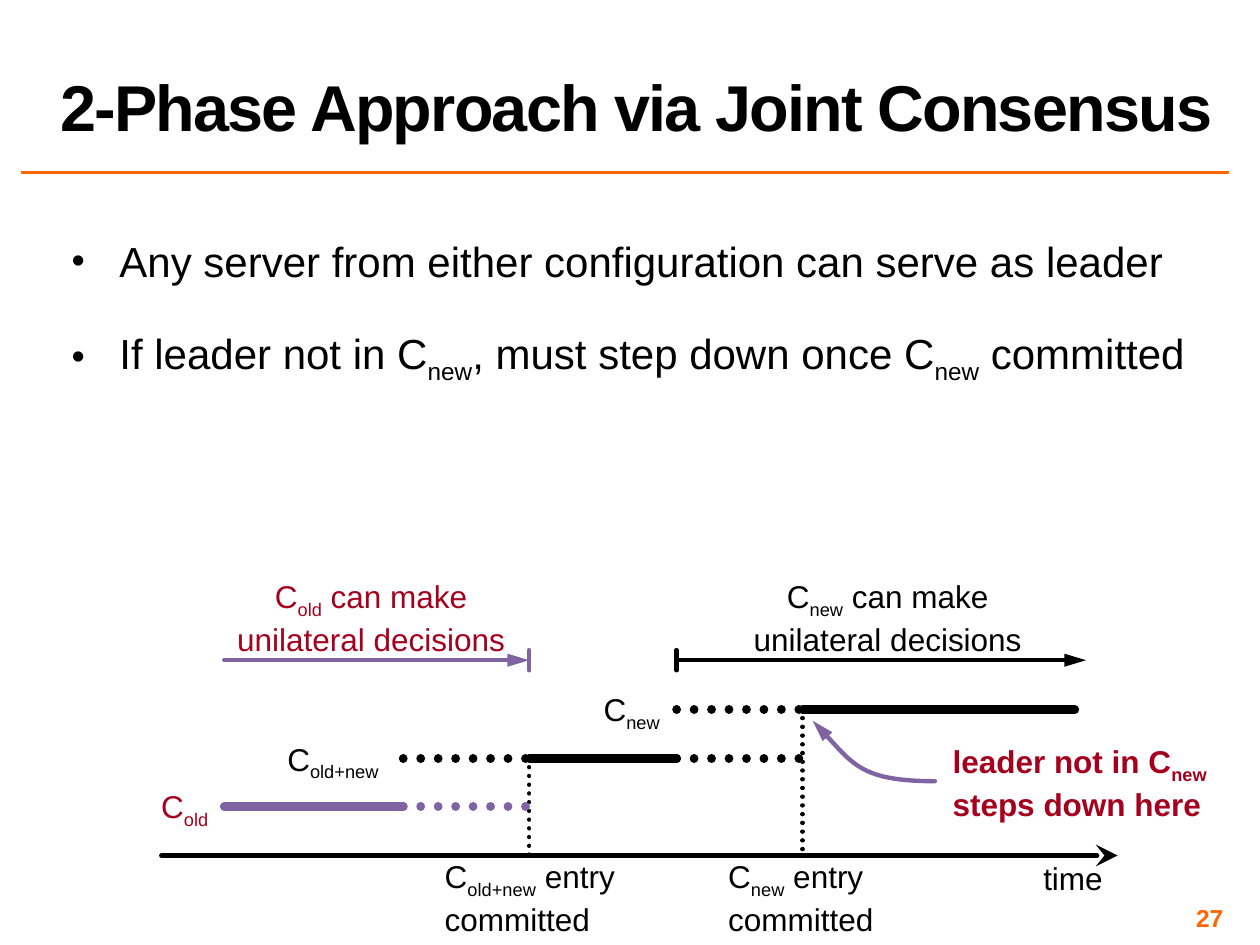
"""Build the slide on two-phase membership change through joint consensus."""
from lxml import etree
from pptx import Presentation
from pptx.dml.color import RGBColor
from pptx.enum import dml, shapes, text
from pptx.oxml import ns
from pptx.util import Inches, Pt

BLACK, RED, PURPLE, ORANGE = "000000", "A5001E", "8064A2", "FF6600"
LEFT, CENTER, RIGHT = text.PP_ALIGN.LEFT, text.PP_ALIGN.CENTER, text.PP_ALIGN.RIGHT
TRIANGLE = {"type": "triangle", "len": "lg"}
STEALTH = {"type": "stealth", "w": "lg", "len": "lg"}

TITLE = "2-Phase Approach via Joint Consensus"
PAGE_NUMBER = "27"
BULLETS = [
    ("Any server from either configuration can serve as leader", 12),
    ("If leader not in C|new|, must step down once C|new| committed", 24),
]

START, JOINT, JOINT_DONE, NEW, NEW_DONE, END = 1.78, 3.2, 4.2, 5.37, 6.37, 8.53
SPAN_Y, NEW_Y, JOINT_Y, OLD_Y, AXIS_Y = 5.24, 5.63, 6.02, 6.4, 6.79
TICK = 0.08

LABELS = [
    (["time"], 8.28, 6.82, 0.48, 0.3, BLACK, LEFT, False),
    (["C|old+new| entry\ncommitted"], 3.53, 6.8, 1.44, 0.61, BLACK, LEFT, False),
    (["C|new| entry\ncommitted"], 5.78, 6.8, 1.16, 0.61, BLACK, LEFT, False),
    (["C|old|"], 1.28, 6.25, 0.4, 0.3, RED, LEFT, False),
    (["C|old+new|"], 2.28, 5.87, 0.81, 0.3, BLACK, LEFT, False),
    (["C|new|"], 4.79, 5.48, 0.49, 0.3, BLACK, LEFT, False),
    (["C|old| can make", "unilateral decisions"], 1.87, 4.58, 2.15, 0.61, RED, CENTER, False),
    (["C|new| can make", "unilateral decisions"], 5.97, 4.58, 2.15, 0.61, BLACK, CENTER, False),
    (["leader not in C|new\n|steps down here"], 7.56, 5.89, 2.08, 0.61, RED, LEFT, True),
]

LINES = [
    (0.17, 1.37, 9.75, 1.37, ORANGE, 2, False, None, "flat"),
    (1.28, AXIS_Y, 8.87, AXIS_Y, BLACK, 2.5, False, STEALTH),
    (JOINT_DONE, JOINT_Y, JOINT_DONE, AXIS_Y, BLACK, 2.5, True),
    (NEW_DONE, NEW_Y, NEW_DONE, AXIS_Y, BLACK, 2.5, True),
    (START, OLD_Y, JOINT, OLD_Y, PURPLE, 5),
    (JOINT_DONE, JOINT_Y, NEW, JOINT_Y, BLACK, 5),
    (JOINT, JOINT_Y, JOINT_DONE, JOINT_Y, BLACK, 5, True),
    (NEW, NEW_Y, NEW_DONE, NEW_Y, BLACK, 5, True),
    (NEW_DONE, NEW_Y, END, NEW_Y, BLACK, 5),
    (START, SPAN_Y, JOINT_DONE, SPAN_Y, PURPLE, 2.5, False, TRIANGLE),
    (JOINT_DONE, SPAN_Y - TICK, JOINT_DONE, SPAN_Y + TICK, PURPLE, 2.5),
    (NEW, SPAN_Y, 8.62, SPAN_Y, BLACK, 2.5, False, TRIANGLE),
    (NEW, SPAN_Y - TICK, NEW, SPAN_Y + TICK, BLACK, 2.5),
    (JOINT, OLD_Y, JOINT_DONE, OLD_Y, PURPLE, 5, True),
    (NEW, JOINT_Y, NEW_DONE, JOINT_Y, BLACK, 5, True),
]
POINTER = [(7.42, 6.2), (6.85, 6.2), (6.73, 6.02), (6.45, 5.72)]


def rgb(value):
    return RGBColor.from_string(value)


def add_xml(parent, tag, **attributes):
    return etree.SubElement(parent, ns.qn(tag), attributes)


def style_line(shape, color, width, dotted=False, head=None, cap="rnd"):
    shape.line.color.rgb = rgb(color)
    shape.line.width = Pt(width)
    if dotted:
        shape.line.dash_style = dml.MSO_LINE.ROUND_DOT
    outline = shape.line._get_or_add_ln()
    outline.set("cap", cap)
    add_xml(outline, "a:round")
    if head:
        add_xml(outline, "a:tailEnd", **head)


def add_line(page, x1, y1, x2, y2, *style):
    line = page.shapes.add_connector(
        shapes.MSO_CONNECTOR.STRAIGHT, Inches(x1), Inches(y1), Inches(x2), Inches(y2))
    style_line(line, *style)
    add_xml(line._element.spPr, "a:effectLst")


def add_pointer(page, points, color, width):
    start, *controls = [(Inches(x), Inches(y)) for x, y in points]
    builder = page.shapes.build_freeform(*start)
    builder.add_line_segments(controls, close=False)
    curve = builder.convert_to_shape()
    curve.shadow.inherit = False
    curve.fill.background()
    style_line(curve, color, width, False, TRIANGLE)
    outline = next(curve._element.iter(ns.qn("a:path")))
    bezier = add_xml(outline, "a:cubicBezTo")
    for segment in outline.findall(ns.qn("a:lnTo")):
        bezier.append(segment[0])
        outline.remove(segment)


def add_box(page, x, y, width, height, inset=None, wrap=True):
    box = page.shapes.add_textbox(Inches(x), Inches(y), Inches(width), Inches(height))
    frame = box.text_frame
    frame.word_wrap = wrap
    if inset is not None:
        frame.margin_left = frame.margin_right = Inches(inset)
        frame.margin_top = frame.margin_bottom = Inches(inset)
    return frame


def add_para(frame, index, content, size, color=BLACK, bold=False, align=LEFT):
    para = frame.add_paragraph() if index else frame.paragraphs[0]
    para.alignment = align
    for part, words in enumerate(content.split("|")):
        for row, piece in enumerate(words.split("\n")):
            if row:
                para.add_line_break()
            if not piece:
                continue
            span = para.add_run()
            span.text = piece
            span.font.name, span.font.size, span.font.bold = "Arial", Pt(size), bold
            span.font.color.rgb = rgb(color)
            if part % 2:
                span._r.get_or_add_rPr().set("baseline", "-25000")
    return para


def add_bullet(para):
    props = para._p.get_or_add_pPr()
    indent = Inches(0.38)
    props.set("marL", str(indent))
    props.set("indent", str(-indent))
    add_xml(add_xml(props, "a:buClr"), "a:srgbClr", val=BLACK)
    add_xml(props, "a:buSzPct", val="90000")
    add_xml(props, "a:buFont", typeface="Arial")
    add_xml(props, "a:buChar", char="•")


def main():
    deck = Presentation()
    deck.slide_width, deck.slide_height = Inches(10), Inches(7.5)
    page = deck.slides.add_slide(deck.slide_layouts[6])

    number = add_box(page, 7.42, 7.17, 2.33, 0.23, 0.04)
    number.vertical_anchor = text.MSO_ANCHOR.MIDDLE
    add_para(number, 0, PAGE_NUMBER, 14, ORANGE, True, RIGHT)

    title = add_box(page, 0.38, 0.02, 9.62, 1.17)
    title.vertical_anchor = text.MSO_ANCHOR.BOTTOM
    heading = add_para(title, 0, TITLE, 37, BLACK, True)
    heading.line_spacing = 0.8
    heading.runs[0]._r.get_or_add_rPr().set("spc", "-100")

    for line in LINES:
        add_line(page, *line)
    add_pointer(page, POINTER, PURPLE, 2.5)

    for rows, x, y, width, height, color, align, bold in LABELS:
        label = add_box(page, x, y, width, height, 0, False)
        label.auto_size = text.MSO_AUTO_SIZE.SHAPE_TO_FIT_TEXT
        for index, row in enumerate(rows):
            add_para(label, index, row, 18, color, bold, align)

    body = add_box(page, 0.47, 1.82, 9.53, 2.51)
    for index, (content, gap) in enumerate(BULLETS):
        para = add_para(body, index, content, 24)
        para.space_before = Pt(gap)
        add_bullet(para)

    deck.save("out.pptx")


if __name__ == "__main__":
    main()
